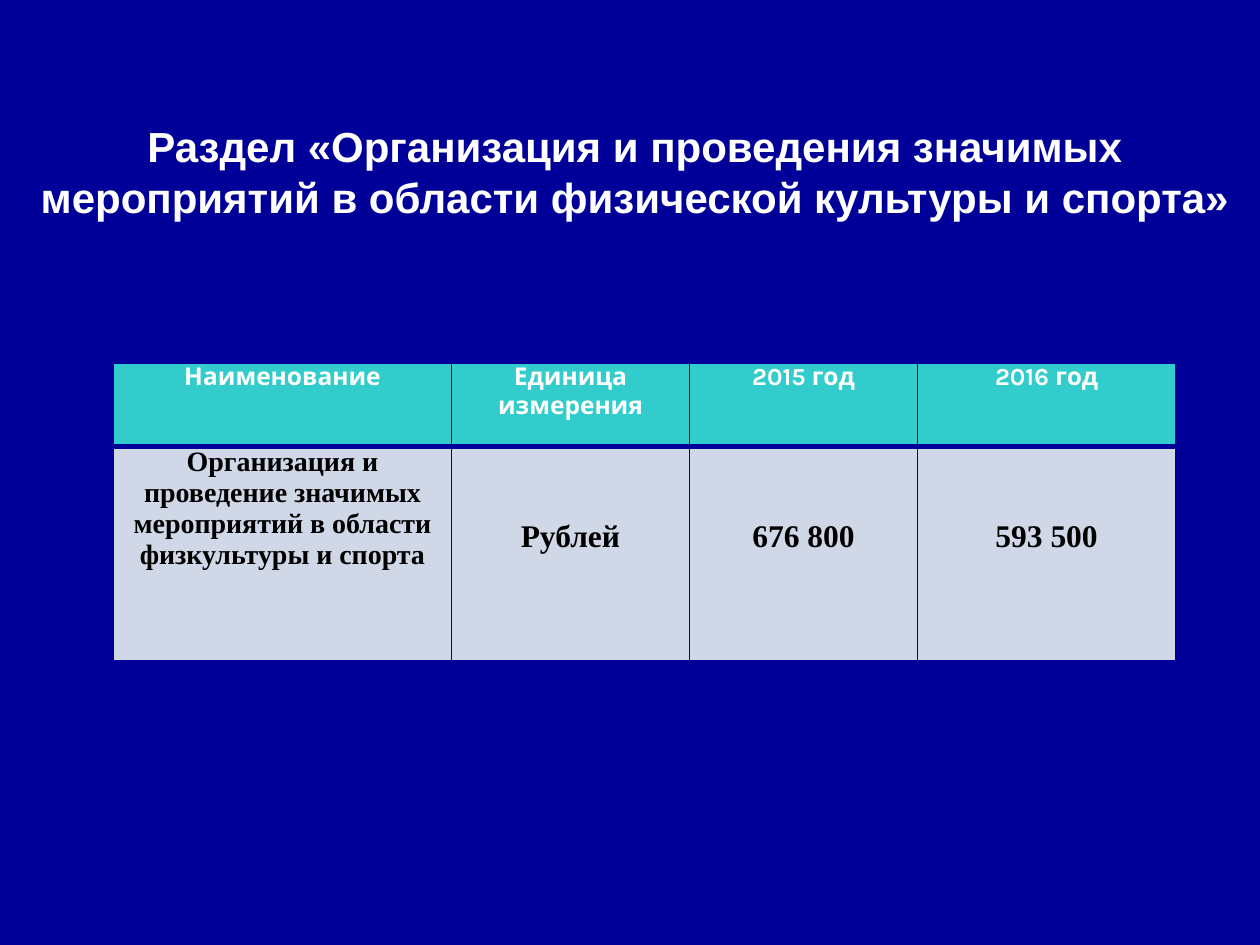
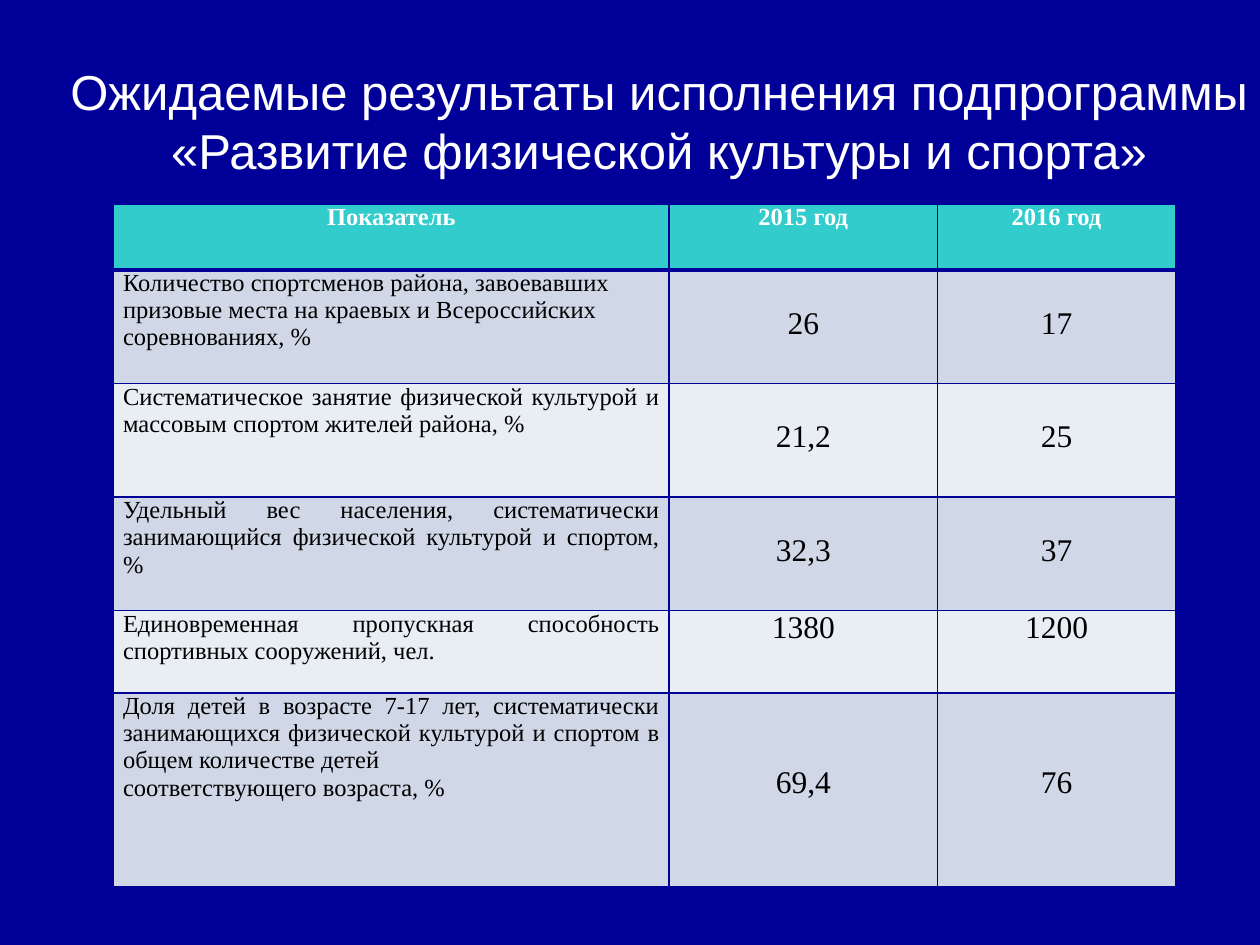
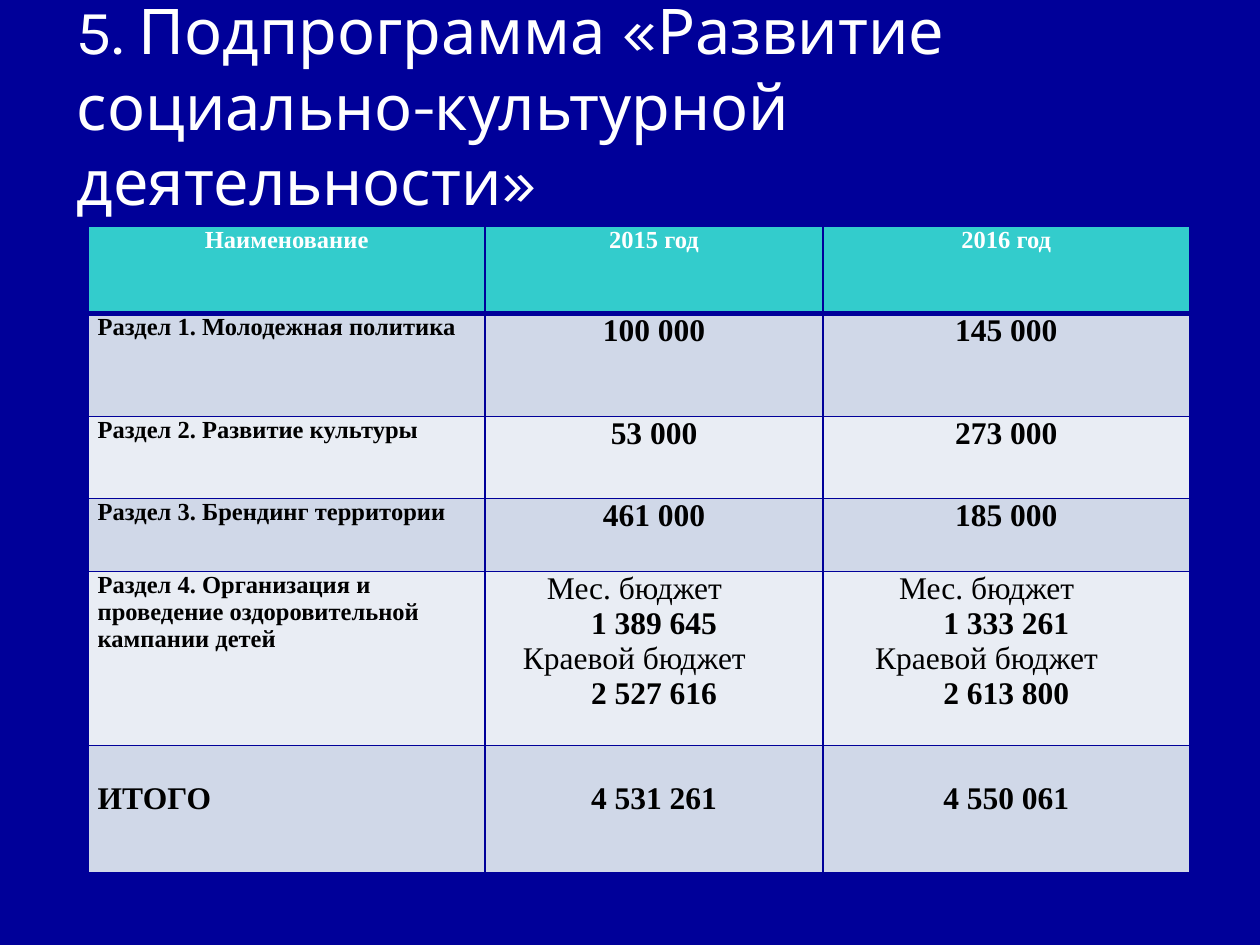
from dataclasses import dataclass

from lxml import etree
from pptx import Presentation
from pptx.dml.color import RGBColor
from pptx.enum.text import MSO_ANCHOR, PP_ALIGN
from pptx.oxml.ns import qn
from pptx.util import Cm, Pt

LEFT, CENTER, JUSTIFY = PP_ALIGN.LEFT, PP_ALIGN.CENTER, PP_ALIGN.JUSTIFY
TOP, MIDDLE = MSO_ANCHOR.TOP, MSO_ANCHOR.MIDDLE


@dataclass(frozen=True)
class Theme:
    navy: str = "000099"
    teal: str = "33CCCC"
    white: str = "FFFFFF"
    black: str = "000000"
    bands: tuple = ("D0D8E8", "E9EDF4")
    sans: str = "Arial"
    display: str = "Karla"
    serif: str = "Times New Roman"
    header_size: int = 14
    label_size: int = 14
    value_size: int = 18
    thin: int = 1
    thick: int = 3


T = Theme()
CELL_MARGIN = Cm(0.19)
DROP = Cm(0.73)          # one line of value text
BUDGET_SHIFT = Cm(0.79)  # budget names sit left of their amounts


def write(tf, lines, font, size, color, bold=False, align=CENTER):
    for i, line in enumerate(lines):
        p = tf.paragraphs[0] if i == 0 else tf.add_paragraph()
        p.alignment = align
        r = p.add_run()
        r.text = line
        r.font.name, r.font.size, r.font.bold = font, Pt(size), bold
        r.font.color.rgb = RGBColor.from_string(color)


def style_cell(cell, fill, top_line, bottom_line, drop=0):
    """Set margins, borders and fill; drop lowers the text by whole lines."""
    cell.margin_left = cell.margin_right = CELL_MARGIN
    cell.margin_top, cell.margin_bottom = DROP * drop, 0
    tcPr = cell._tc.get_or_add_tcPr()
    sides = (("lnL", T.thin), ("lnR", T.thin), ("lnT", top_line), ("lnB", bottom_line))
    for side, width in sides:
        ln = etree.SubElement(tcPr, qn(f"a:{side}"), w=str(Pt(width)))
        solid = etree.SubElement(ln, qn("a:solidFill"))
        etree.SubElement(solid, qn("a:srgbClr"), val=T.navy)
    cell.fill.solid()
    cell.fill.fore_color.rgb = RGBColor.from_string(fill)


# Body rows: height, label lines, values, label alignment, lines of drop
slides = [
    dict(
        title=["Раздел «Организация и проведения значимых мероприятий "
               "в области физической культуры и спорта»"],
        title_box=(0.1, 2.31, 25.4, 3.05), title_font=T.sans, title_size=24,
        title_bold=True, title_align=CENTER, title_anchor=TOP, title_wrap=True,
        table_at=(2.29, 7.32), cols=(6.81, 4.8, 4.6, 5.2),
        header=("Наименование", "Единица измерения", "2015 год", "2016 год"),
        header_font=T.display, header_height=1.68, label_size=16, bold=True,
        rows=[
            (4.32, ["Организация и проведение значимых мероприятий "
                    "в области физкультуры и спорта"],
             ("Рублей", "676 800", "593 500"), CENTER, 2),
        ],
    ),
    dict(
        title=["Ожидаемые результаты исполнения подпрограммы",
               "«Развитие физической культуры и спорта»"],
        title_box=(0.89, 1.12, 24.79, 2.62), title_font=T.sans, title_size=28,
        title_bold=False, title_align=CENTER, title_anchor=TOP, title_wrap=False,
        table_at=(2.29, 4.11), cols=(11.2, 5.41, 4.8),
        header=("Показатель", "2015 год", "2016 год"),
        header_font=T.serif, header_height=1.33, label_size=T.label_size, bold=False,
        rows=[
            (2.29, ["Количество спортсменов района, завоевавших призовые места "
                    "на краевых и Всероссийских соревнованиях, %"],
             ("26", "17"), LEFT, 1),
            (2.29, ["Систематическое занятие физической культурой и массовым "
                    "спортом жителей района, %"],
             ("21,2", "25"), JUSTIFY, 1),
            (2.29, ["Удельный вес населения, систематически занимающийся "
                    "физической культурой и спортом, %"],
             ("32,3", "37"), JUSTIFY, 1),
            (1.66, ["Единовременная пропускная способность спортивных сооружений, чел."],
             ("1380", "1200"), JUSTIFY, 0),
            (3.91, ["Доля детей в возрасте 7-17 лет, систематически занимающихся "
                    "физической культурой и спортом в общем количестве детей",
                    "соответствующего возраста, %"],
             ("69,4", "76"), JUSTIFY, 2),
        ],
    ),
    dict(
        title=["5. Подпрограмма «Развитие социально-культурной деятельности»"],
        title_box=(1.3, 0.53, 22.86, 3.18), title_font=T.display, title_size=36,
        title_bold=False, title_align=LEFT, title_anchor=MIDDLE, title_wrap=True,
        table_at=(1.78, 4.57), cols=(8, 6.81, 7.39),
        header=("Наименование", "2015 год", "2016 год"),
        header_font=T.serif, header_height=1.75, label_size=T.label_size, bold=True,
        rows=[
            (2.08, ["Раздел 1. Молодежная политика"], ("100 000", "145 000"), LEFT, 0),
            (1.65, ["Раздел 2. Развитие культуры"], ("53 000", "273 000"), LEFT, 0),
            (1.47, ["Раздел 3. Брендинг территории"], ("461 000", "185 000"), LEFT, 0),
            (3.51, ["Раздел 4. Организация и проведение оздоровительной кампании детей"],
             (("Мес. бюджет", "1 389 645", "Краевой бюджет", "2 527 616"),
              ("Мес. бюджет", "1 333 261", "Краевой бюджет", "2 613 800")), LEFT, 0),
            (2.57, ["ИТОГО"], ("4 531 261", "4 550 061"), JUSTIFY, 1),
        ],
    ),
]

prs = Presentation()
prs.slide_width, prs.slide_height = Cm(25.4), Cm(19.05)
background = prs.slide_master.background.fill
background.solid()
background.fore_color.rgb = RGBColor.from_string(T.navy)

for d in slides:
    s = prs.slides.add_slide(prs.slide_layouts[6])

    tf = s.shapes.add_textbox(*map(Cm, d["title_box"])).text_frame
    tf.word_wrap, tf.vertical_anchor = d["title_wrap"], d["title_anchor"]
    write(tf, d["title"], d["title_font"], d["title_size"], T.white,
          d["title_bold"], d["title_align"])

    heights = [d["header_height"]] + [row[0] for row in d["rows"]]
    table = s.shapes.add_table(
        len(heights), len(d["cols"]), *map(Cm, d["table_at"]),
        Cm(sum(d["cols"])), Cm(sum(heights))).table
    for column, width in zip(table.columns, d["cols"]):
        column.width = Cm(width)
    for row, height in zip(table.rows, heights):
        row.height = Cm(height)

    for c, text in enumerate(d["header"]):
        cell = table.cell(0, c)
        style_cell(cell, T.teal, T.thin, T.thick)
        write(cell.text_frame, [text], d["header_font"], T.header_size, T.white, True)

    for i, (_, label, values, align, drop) in enumerate(d["rows"]):
        fill = T.bands[i % 2]
        top_line = T.thick if i == 0 else T.thin
        is_total = label == ["ИТОГО"]

        cell = table.cell(i + 1, 0)
        style_cell(cell, fill, top_line, T.thin, drop if is_total else 0)
        write(cell.text_frame, label, T.serif,
              T.value_size if is_total else d["label_size"], T.black, d["bold"], align)

        for c, value in enumerate(values, start=1):
            cell = table.cell(i + 1, c)
            style_cell(cell, fill, top_line, T.thin, drop)
            lines = [value] if isinstance(value, str) else value
            write(cell.text_frame, lines, T.serif, T.value_size, T.black, d["bold"])
            if len(lines) > 1:
                cell.margin_right = CELL_MARGIN + BUDGET_SHIFT
                paragraphs = cell.text_frame.paragraphs
                for p in paragraphs[::2]:
                    p.runs[0].font.bold = False
                for p in paragraphs[1::2]:
                    p._p.get_or_add_pPr().set("marL", str(BUDGET_SHIFT))

prs.save("out.pptx")
